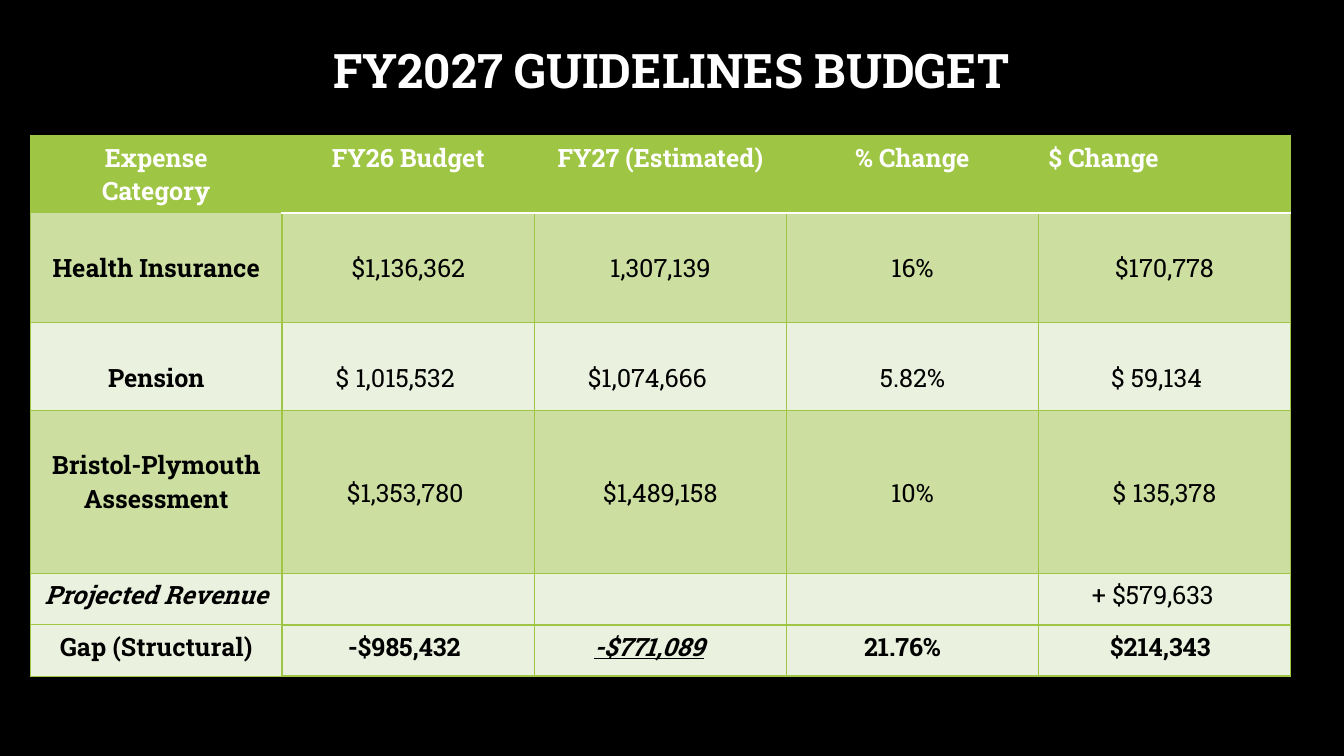
"""Build the FY2027 guidelines budget slide."""
from lxml.etree import SubElement
from pptx import Presentation
from pptx.dml.color import RGBColor
from pptx.enum.text import MSO_ANCHOR, PP_ALIGN
from pptx.oxml.ns import qn
from pptx.util import Inches, Pt

GREEN, BAND, PALE = "9EC544", "CCDFA1", "EBF1DF"
WHITE, BLACK = "FFFFFF", "000000"
COLUMN_WIDTHS = [2.5] * 5
ROW_HEIGHTS = [0.76, 1.09, 0.87, 1.62, 0.51, 0.51]
ROW_FILLS = [GREEN, BAND, PALE, BAND, PALE, PALE]

BOLD = {"bold": True}
MIDDLE = {"anchor": MSO_ANCHOR.MIDDLE}
LOWERED = {"top": 0.38}
TIGHT = {**MIDDLE, "left": 0.01, "right": 0.01, "top": 0.01, "bottom": 0}


def color(value):
    """Turn a hex string into a colour."""
    return RGBColor.from_string(value)


def indented(left, **formats):
    """Return the formats of a left-aligned cell that starts at the given inset."""
    return {"align": PP_ALIGN.LEFT, "left": left, **formats}


BUDGET = [
    (BOLD, [("Expense\nCategory", {}), ("FY26 Budget", {}), ("FY27 (Estimated)", {}),
            ("% Change", {}), ("$ Change", indented(0.1))]),
    (MIDDLE, [("Health Insurance", BOLD), ("$1,136,362", {}), ("1,307,139", {}),
              ("16%", {}), ("$170,778", {})]),
    (LOWERED, [("Pension", BOLD), ("$ 1,015,532", indented(0.53)),
               ("$1,074,666", indented(0.53)), ("5.82%", {}), ("$ 59,134", indented(0.72))]),
    (TIGHT, [("Bristol-Plymouth Assessment",
              {**BOLD, "anchor": MSO_ANCHOR.TOP, "left": 0.1, "right": 0.1, "top": 0.38}),
             ("$1,353,780", {"right": 0.07}), ("$1,489,158", {}), ("10%", {}),
             ("$ 135,378", {})]),
    ({}, [("Projected Revenue", {"bold": True, "italic": True}), ("", {}), ("", {}), ("", {}),
          ("+ $579,633", indented(0.53))]),
    (BOLD, [("Gap (Structural)", {}), ("-$985,432", indented(0.65)),
            ("-$771,089", indented(0.59, italic=True, underline=True)),
            ("21.76%", indented(0.77)), ("$214,343", indented(0.71))]),
]


class SlideBuilder:
    """Hold the style and the current slide."""

    font_name = "Roboto Slab"

    def __init__(self, presentation):
        """Add a blank slide with a black background."""
        self.slide = presentation.slides.add_slide(presentation.slide_layouts[6])
        self.slide.background.fill.solid()
        self.slide.background.fill.fore_color.rgb = color(BLACK)

    def fill_text(self, frame, text, align, text_color, font_formats):
        """Set one paragraph for each line of text."""
        frame.text = text
        for paragraph in frame.paragraphs:
            paragraph.alignment = align
            for run in paragraph.runs:
                run.font.color.rgb = color(text_color)
                for name, value in {"name": self.font_name, **font_formats}.items():
                    setattr(run.font, name, value)

    def title(self, text, left, top, width, height):
        """Add the centred title."""
        shape = self.slide.shapes.add_textbox(*map(Inches, (left, top, width, height)))
        frame = shape.text_frame
        frame.word_wrap = True
        frame.vertical_anchor = MSO_ANCHOR.MIDDLE
        self.fill_text(frame, text, PP_ALIGN.CENTER, WHITE, {"size": Pt(34), "bold": True})
        frame.paragraphs[0].line_spacing = 0.9

    def table(self, rows, left, top):
        """Add the budget table."""
        shape = self.slide.shapes.add_table(
            len(rows), len(COLUMN_WIDTHS), Inches(left), Inches(top),
            Inches(sum(COLUMN_WIDTHS)), Inches(sum(ROW_HEIGHTS)))
        table = shape.table
        table.horz_banding = False
        for column, width in zip(table.columns, COLUMN_WIDTHS):
            column.width = Inches(width)
        for row, height in zip(table.rows, ROW_HEIGHTS):
            row.height = Inches(height)
        for row_index, (row_formats, cells) in enumerate(rows):
            for column_index, (text, formats) in enumerate(cells):
                cell = table.cell(row_index, column_index)
                self.borders(cell, row_index, column_index)
                cell.fill.solid()
                cell.fill.fore_color.rgb = color(ROW_FILLS[row_index])
                text_color = BLACK if row_index else WHITE
                self.cell_text(cell, text, text_color, {**row_formats, **formats})

    def cell_text(self, cell, text, text_color, formats):
        """Set the insets and the text of a cell."""
        insets = {"left": 0.1, "right": 0.1, "top": 0.05, "bottom": 0.05}
        for side, inset in insets.items():
            setattr(cell, f"margin_{side}", Inches(formats.get(side, inset)))
        cell.vertical_anchor = formats.get("anchor", MSO_ANCHOR.TOP)
        font_formats = {name: formats.get(name, False) for name in ("bold", "italic", "underline")}
        self.fill_text(cell.text_frame, text, formats.get("align", PP_ALIGN.CENTER),
                       text_color, {"size": Pt(18), **font_formats})

    def borders(self, cell, row, column):
        """Draw the four borders of a cell."""
        properties = cell._tc.get_or_add_tcPr()
        sides = {"lnL": self.vertical_line(column), "lnR": self.vertical_line(column + 1),
                 "lnT": self.horizontal_line(row, column),
                 "lnB": self.horizontal_line(row + 1, column)}
        for tag, (line_color, width) in sides.items():
            line = SubElement(properties, qn(f"a:{tag}"), w=str(Pt(width)))
            fill = SubElement(line, qn("a:solidFill"))
            SubElement(fill, qn("a:srgbClr"), val=line_color)

    def vertical_line(self, index):
        """Return the colour and width of a vertical grid line."""
        return GREEN, 1.5 if index == 1 else 1

    def horizontal_line(self, index, column):
        """Return the colour and width of a horizontal grid line."""
        if index == 1 and column:
            return WHITE, 1.5
        return GREEN, 1.5 if index >= 5 and column else 1


def main():
    """Build and save the presentation."""
    presentation = Presentation()
    presentation.slide_width = Inches(13.33)
    presentation.slide_height = Inches(7.5)
    builder = SlideBuilder(presentation)
    builder.title("FY2027 GUIDELINES BUDGET", 1, 0, 11.32, 1.45)
    builder.table(BUDGET, 0.3, 1.35)
    presentation.save("out.pptx")


if __name__ == "__main__":
    main()
